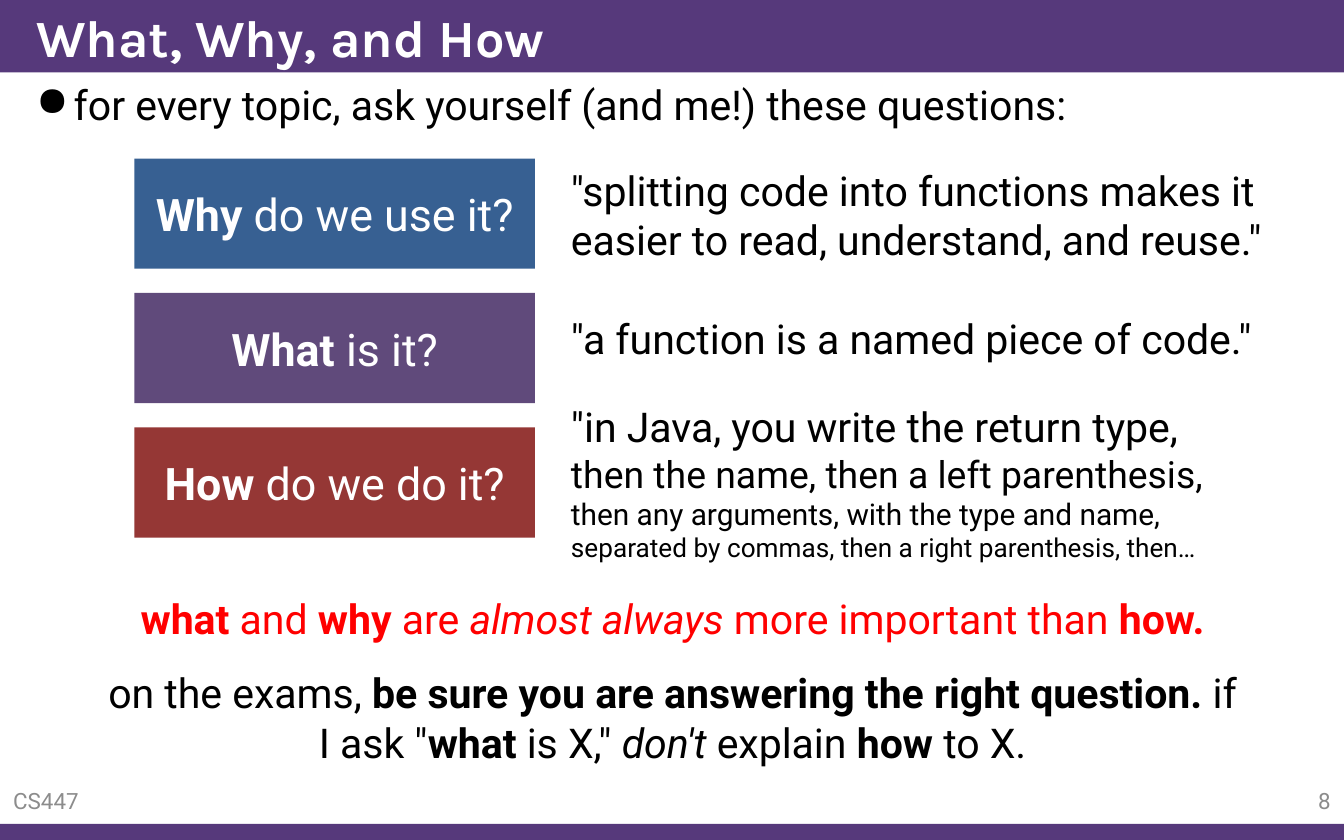
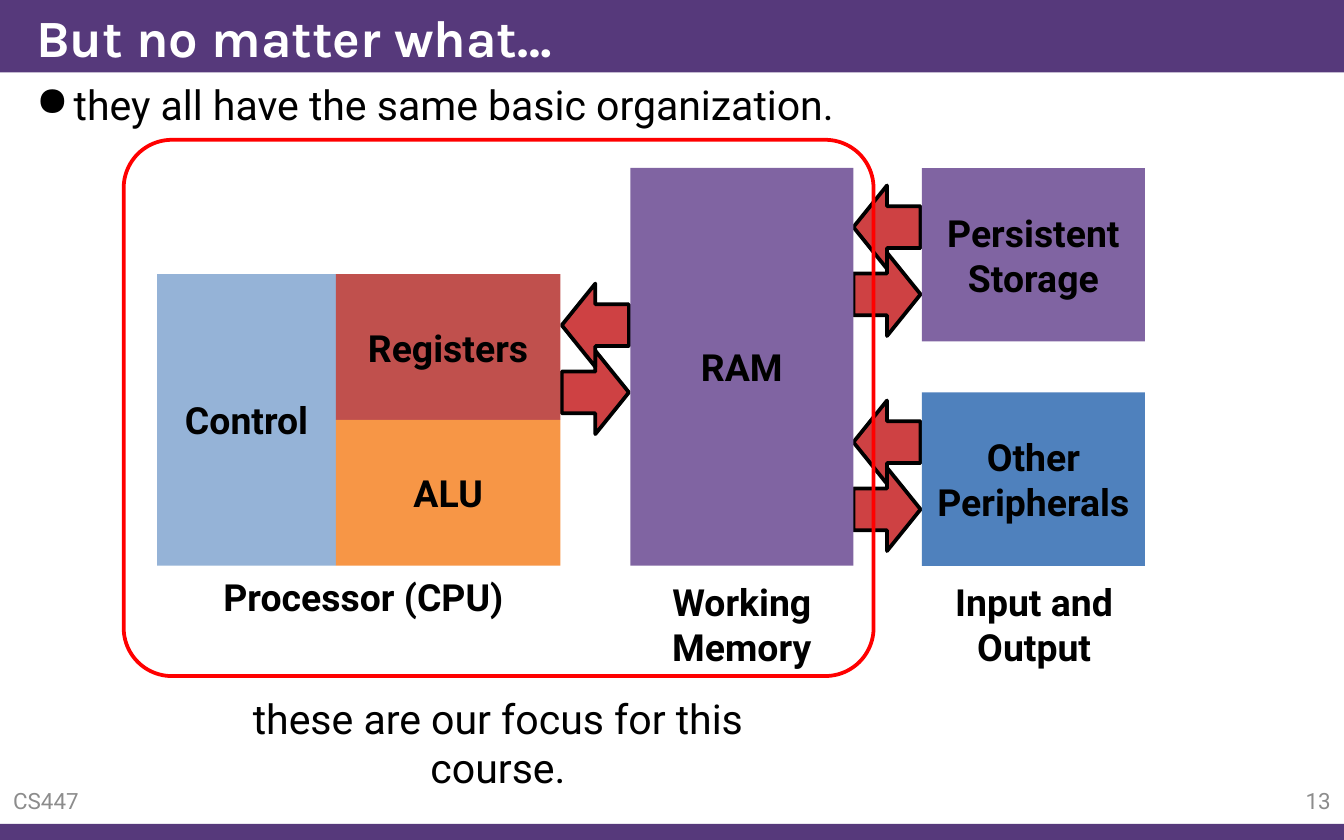
from dataclasses import dataclass

from lxml import etree
from pptx import Presentation
from pptx.dml.color import RGBColor
from pptx.enum.shapes import MSO_SHAPE
from pptx.enum.text import MSO_ANCHOR, PP_ALIGN
from pptx.oxml.ns import qn
from pptx.util import Inches, Pt

LEFT, CENTER, RIGHT = PP_ALIGN.LEFT, PP_ALIGN.CENTER, PP_ALIGN.RIGHT
TOP, MIDDLE = MSO_ANCHOR.TOP, MSO_ANCHOR.MIDDLE
RECT, ROUNDED = MSO_SHAPE.RECTANGLE, MSO_SHAPE.ROUNDED_RECTANGLE
ARROW_LEFT, ARROW_RIGHT = MSO_SHAPE.LEFT_ARROW, MSO_SHAPE.RIGHT_ARROW


@dataclass(frozen=True)
class Theme:
    heading_font: str = "Karla"
    body_font: str = "Roboto"
    band: str = "56397B"
    white: str = "FFFFFF"
    black: str = "000000"
    muted: str = "8C8C8C"
    accent: str = "FF0000"
    why: str = "376092"
    what: str = "604A7B"
    how: str = "953735"
    control: str = "95B3D7"
    registers: str = "C0504D"
    alu: str = "F79646"
    memory: str = "8064A2"
    peripherals: str = "4F81BD"
    arrow: str = "CE4143"
    title_size: int = 28
    question_size: int = 24
    body_size: int = 22
    part_size: int = 20
    footer_size: int = 12
    outline: int = 2


THEME = Theme()
WIDTH, HEIGHT = 10, 6.25
TITLE_HEIGHT, BASE_HEIGHT = 0.54, 0.12
BOLD, ITALIC = {"bold": True}, {"italic": True}

COURSE = "CS447"

# Text is a list of (words, format) runs; a newline in the words is a line break.
QUESTIONS = [
    ([("Why ", BOLD), ("do we use it?", {})], THEME.why),
    ([("What ", BOLD), ("is it?", {})], THEME.what),
    ([("How ", BOLD), ("do we do it?", {})], THEME.how),
]
ANSWERS = [
    ((4.15, 1.18, 5.68, 0.84),
     [('"splitting code into functions makes it easier to read, understand, and reuse."', {})]),
    ((4.15, 2.28, 5.35, 0.47), [('"a function is a named piece of code."', {})]),
    ((4.15, 2.94, 5.02, 1.31), [
        ('"in Java, you write the return type, ', {}),
        ("then the name, then a left parenthesis, ", {"size": Pt(20)}),
        ("then any arguments, with the type and name, ", {"size": Pt(16)}),
        ("separated by commas, then a right parenthesis, then…", {"size": Pt(14)}),
    ]),
]
PRIORITY = [
    ("what", BOLD), (" and ", {}), ("why", BOLD), (" are ", {}),
    ("almost always", ITALIC), (" more important than ", {}), ("how.", BOLD),
]
EXAM_ADVICE = [
    ("on the exams, ", {}), ("be sure you are answering the right question. ", BOLD),
    ('if I ask "', {}), ("what", BOLD), (' is X," ', {}), ("don't ", ITALIC),
    ("explain ", {}), ("how", BOLD), (" to X.", {}),
]

CPU_LEFT, CPU_TOP, CPU_HEIGHT = 1.17, 2.04, 2.17
CONTROL_WIDTH, UNIT_WIDTH = 1.33, 1.67
UNIT_LEFT, UNIT_HEIGHT = CPU_LEFT + CONTROL_WIDTH, CPU_HEIGHT / 2
RAM_LEFT, IO_LEFT, COLUMN_TOP, COLUMN_WIDTH = 4.69, 6.86, 1.25, 1.66
RAM_HEIGHT, IO_HEIGHT = 2.96, 1.29
COMPUTER_PARTS = [
    ("Control", THEME.control, (CPU_LEFT, CPU_TOP, CONTROL_WIDTH, CPU_HEIGHT)),
    ("Registers", THEME.registers, (UNIT_LEFT, CPU_TOP, UNIT_WIDTH, UNIT_HEIGHT)),
    ("ALU", THEME.alu, (UNIT_LEFT, CPU_TOP + UNIT_HEIGHT, UNIT_WIDTH, UNIT_HEIGHT)),
    ("RAM", THEME.memory, (RAM_LEFT, COLUMN_TOP, COLUMN_WIDTH, RAM_HEIGHT)),
    ("Persistent Storage", THEME.memory, (IO_LEFT, COLUMN_TOP, COLUMN_WIDTH, IO_HEIGHT)),
    ("Other Peripherals", THEME.peripherals,
     (IO_LEFT, COLUMN_TOP + RAM_HEIGHT - IO_HEIGHT, COLUMN_WIDTH, IO_HEIGHT)),
]
CAPTIONS = [
    ("Processor (CPU)", (1.55, 4.22, 2.31, 0.44)),
    ("Working\nMemory", (4.85, 4.26, 1.34, 0.77)),
    ("Input and\nOutput", (6.95, 4.26, 1.49, 0.77)),
]
DATA_FLOWS = [(4.18, 2.11), (6.35, 1.38), (6.35, 2.98)]
ARROW_WIDTH, ARROW_HEIGHT, ARROW_STEP = 0.5, 0.62, 0.5
FOCUS_AREA = (0.92, 1.04, 5.58, 3.99)
FOCUS_NOTE = "these are our focus for this course."


def write(shape, content, size=THEME.body_size, color=THEME.black, align=LEFT,
          anchor=TOP, font=THEME.body_font, bold=False, wrap=True):
    """Fill a shape with one paragraph: plain words or a list of runs."""
    frame = shape.text_frame
    frame.word_wrap = wrap
    frame.vertical_anchor = anchor
    paragraph = frame.paragraphs[0]
    paragraph.alignment = align
    runs = [(content, {})] if isinstance(content, str) else content
    for words, changes in runs:
        for index, line in enumerate(words.split("\n")):
            if index:
                paragraph.add_line_break()
            run = paragraph.add_run()
            run.text = line
            run.font.color.rgb = RGBColor.from_string(color)
            values = {"name": font, "size": Pt(size), "bold": bold, "italic": False}
            for name, value in (values | changes).items():
                setattr(run.font, name, value)
    return paragraph


def add_text(slide, box, content, **style):
    return write(slide.shapes.add_textbox(*map(Inches, box)), content, **style)


def add_block(slide, box, fill=None, line=None, kind=RECT):
    block = slide.shapes.add_shape(kind, *map(Inches, box))
    block.shadow.inherit = False
    if fill:
        block.fill.solid()
        block.fill.fore_color.rgb = RGBColor.from_string(fill)
    else:
        block.fill.background()
    if line:
        block.line.color.rgb = RGBColor.from_string(line)
        block.line.width = Pt(THEME.outline)
    else:
        block.line.fill.background()
    return block


def add_bullet(paragraph):
    properties = paragraph._p.get_or_add_pPr()
    properties.set("marL", str(Inches(0.28)))
    properties.set("indent", str(Inches(-0.28)))
    etree.SubElement(properties, qn("a:buChar")).set("char", "●")


def add_page(deck, title, lead, number):
    """Add a slide with its bands, title, leading bullet and footer."""
    slide = deck.slides.add_slide(deck.slide_layouts[6])
    add_block(slide, (0, HEIGHT - BASE_HEIGHT, WIDTH, BASE_HEIGHT), THEME.band)
    add_block(slide, (0, 0, WIDTH, TITLE_HEIGHT), THEME.band)
    add_text(slide, (0.17, 0, 9.83, TITLE_HEIGHT), title, size=THEME.title_size,
             color=THEME.white, font=THEME.heading_font, bold=True, anchor=MIDDLE)
    add_bullet(add_text(slide, (0.17, TITLE_HEIGHT, 9.83, 0.54), lead))
    footer = {"size": THEME.footer_size, "color": THEME.muted, "anchor": MIDDLE}
    add_text(slide, (0, 5.79, 1.33, 0.33), COURSE, **footer)
    add_text(slide, (9.25, 5.79, 0.75, 0.33), str(number), align=RIGHT, **footer)
    return slide


def build_questions(deck):
    slide = add_page(deck, "What, Why, and How",
                     "for every topic, ask yourself (and me!) these questions:", 8)
    for row, (question, fill) in enumerate(QUESTIONS):
        block = add_block(slide, (1, 1.18 + row, 2.98, 0.82), fill)
        write(block, question, size=THEME.question_size, color=THEME.white,
              align=CENTER, anchor=MIDDLE)
    for box, answer in ANSWERS:
        add_text(slide, box, answer)
    add_text(slide, (0.38, 4.37, 9.25, 0.47), PRIORITY, color=THEME.accent, align=CENTER)
    add_text(slide, (0.67, 4.92, 8.67, 0.84), EXAM_ADVICE, align=CENTER)


def build_organization(deck):
    slide = add_page(deck, "But no matter what…",
                     "they all have the same basic organization.", 13)
    label = {"size": THEME.part_size, "bold": True, "align": CENTER}
    for left, top in DATA_FLOWS:
        for kind, offset in ((ARROW_RIGHT, ARROW_STEP), (ARROW_LEFT, 0)):
            add_block(slide, (left, top + offset, ARROW_WIDTH, ARROW_HEIGHT),
                      THEME.arrow, THEME.black, kind)
    for part, fill, box in COMPUTER_PARTS:
        write(add_block(slide, box, fill), part, anchor=MIDDLE, **label)
    for caption, box in CAPTIONS:
        add_text(slide, box, caption, wrap=False, **label)
    focus = add_block(slide, FOCUS_AREA, line=THEME.accent, kind=ROUNDED)
    focus.adjustments[0] = 0.09
    add_text(slide, (1.26, 5.11, 4.89, 0.47), FOCUS_NOTE, align=CENTER)


def main():
    deck = Presentation()
    deck.slide_width, deck.slide_height = Inches(WIDTH), Inches(HEIGHT)
    build_questions(deck)
    build_organization(deck)
    deck.save("out.pptx")


if __name__ == "__main__":
    main()
